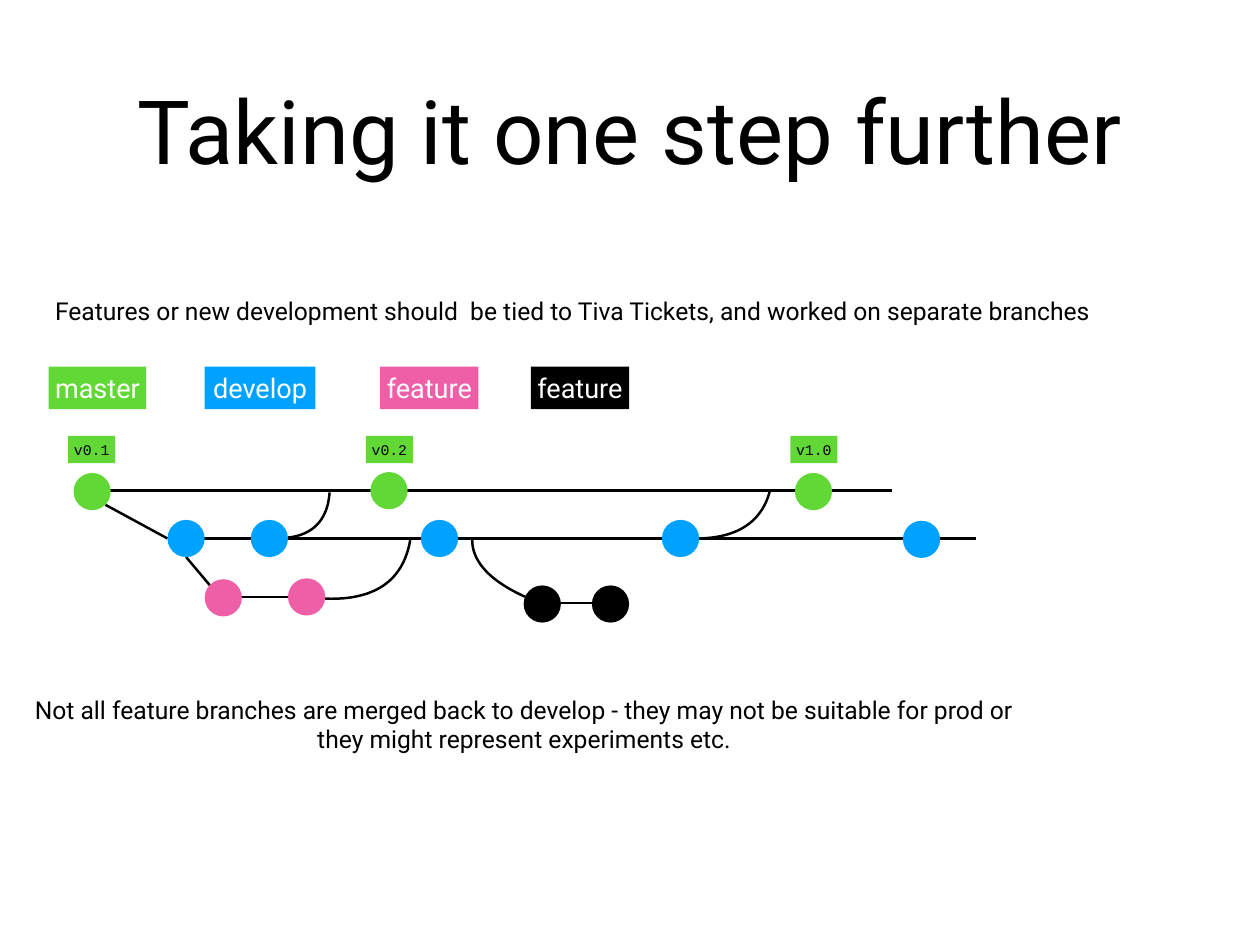
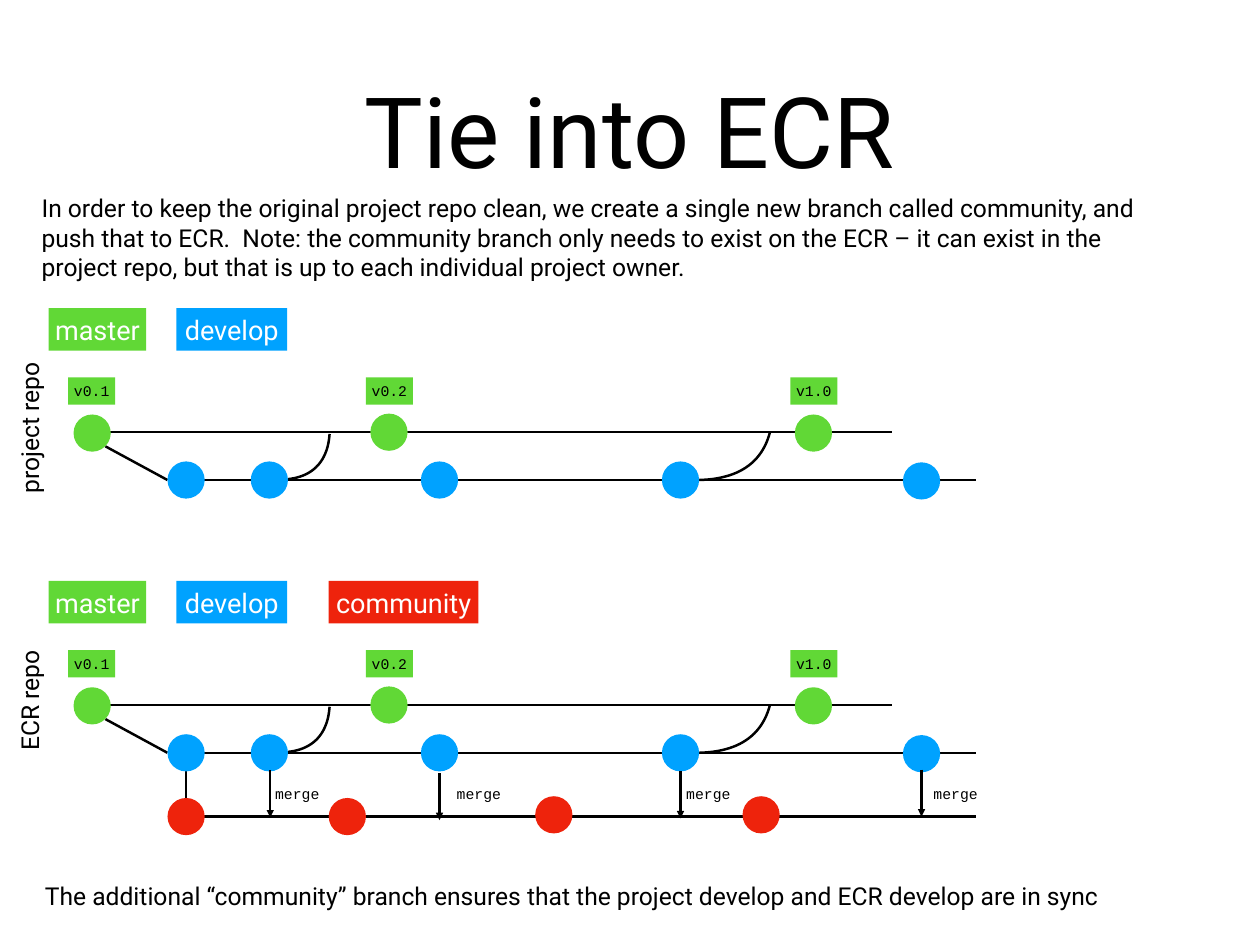
"""Build two slides that show how branches flow and merge."""
import pptx
import pptx.util
import pptx.dml.color
import pptx.enum.shapes
import pptx.enum.text
import pptx.oxml

Inches = pptx.util.Inches
Pt = pptx.util.Pt
RGB = pptx.dml.color.RGBColor
KIND = pptx.enum.shapes.MSO_SHAPE
FIT = pptx.enum.text.MSO_AUTO_SIZE
ALIGN = pptx.enum.text.PP_ALIGN
NS = 'xmlns:a="http://schemas.openxmlformats.org/drawingml/2006/main"'

GREEN = RGB(0x61, 0xD8, 0x36)
BLUE = RGB(0x00, 0xA2, 0xFF)
PINK = RGB(0xEF, 0x5F, 0xA7)
RED = RGB(0xEE, 0x23, 0x0C)
BLACK = RGB(0, 0, 0)
WHITE = RGB(0xFF, 0xFF, 0xFF)
SANS = "Roboto"
MONO = "Courier New"
DOT = 0.42


def write(page, text, x, y, w, h, size=20, font=SANS, color=BLACK, fill=None, wrap=False, fit=True, align=ALIGN.CENTER):
    """Add a text box, or a filled rectangle with text."""
    place = Inches(x), Inches(y), Inches(w), Inches(h)
    if fill is None:
        box = page.shapes.add_textbox(*place)
    else:
        box = page.shapes.add_shape(KIND.RECTANGLE, *place)
        box.shadow.inherit = False
        box.fill.solid()
        box.fill.fore_color.rgb = fill
        box.line.fill.background()
    frame = box.text_frame
    frame.margin_left = frame.margin_right = Inches(0.06)
    frame.margin_top = frame.margin_bottom = Inches(0.06)
    frame.vertical_anchor = pptx.enum.text.MSO_ANCHOR.MIDDLE
    frame.word_wrap = wrap
    frame.auto_size = FIT.SHAPE_TO_FIT_TEXT if fit else FIT.NONE
    frame.text = text
    for para in frame.paragraphs:
        para.alignment = align
        para.font.size = Pt(size)
        para.font.name = font
        para.font.color.rgb = color
    return box


def link(page, x1, y1, x2, y2, arrow=False):
    """Add a straight line, with an arrowhead at its end if asked."""
    line = page.shapes.add_connector(
        pptx.enum.shapes.MSO_CONNECTOR.STRAIGHT, Inches(x1), Inches(y1), Inches(x2), Inches(y2))
    line.line.color.rgb = BLACK
    line.line.width = Pt(2)
    if arrow:
        line.line._get_or_add_ln().append(pptx.oxml.parse_xml(f'<a:tailEnd {NS} type="triangle" w="med" len="med"/>'))
    line._element.spPr.append(pptx.oxml.parse_xml(f"<a:effectLst {NS}/>"))


deck = pptx.Presentation()
deck.slide_width = Inches(14.22)
deck.slide_height = Inches(10.67)

pages = []
for title, size in (("Taking it one step further", 72), ("Tie into ECR", 80)):
    page = deck.slides.add_slide(deck.slide_layouts[6])
    write(page, title, 1.04, 0.28, 12.14, 2.36, size, wrap=True, fit=False)
    pages.append(page)
step, tie = pages

write(step, "Features or new development should  be tied to Tiva Tickets, and worked on separate branches",
      0.48, 3.28, 11.97, 0.45)
write(step, "Not all feature branches are merged back to develop - they may not be suitable for prod or\n"
      "they might represent experiments etc.", 0.24, 7.79, 11.35, 0.77)
write(tie, "In order to keep the original project repo clean, we create a single new branch called community, "
      "and push that to ECR.  Note: the community branch only needs to exist on the ECR – it can exist in the "
      "project repo, but that is up to each individual project owner.",
      0.41, 2.12, 12.77, 1.12, wrap=True, align=ALIGN.LEFT)
write(tie, "The additional “community” branch ensures that the project develop and ECR develop are in sync",
      0.33, 9.89, 12.25, 0.44)
for text, x, y, w in (("project repo", -0.48, 4.61, 1.62), ("ECR repo", -0.33, 7.69, 1.32)):
    write(tie, text, x, y, w, 0.44).rotation = 270

LINES = [(1.04, 1.4, 10.07, 1.4), (1.99, 1.94, 11.02, 1.94), (1.19, 1.56, 1.89, 1.94)]
CURVES = [
    ((3.25, 1.93), (3.54, 1.9), (3.7, 1.72), (3.72, 1.42)),
    ((7.89, 1.94), (8.33, 1.93), (8.6, 1.75), (8.69, 1.4)),
]
DOTS = [
    (GREEN, [(1.04, 1.41), (4.39, 1.4), (9.18, 1.41)]),
    (BLUE, [(2.1, 1.94), (3.04, 1.94), (4.96, 1.94), (7.68, 1.94), (10.4, 1.95)]),
]
TAGS = [("v0.1", 0.77), ("v0.2", 4.13), ("v1.0", 8.92)]
MASTER = ("master", 0.55, 1.1, GREEN)
DEV = ("develop", 1.99, 1.25, BLUE)

graphs = [
    (step, 4.14,
     [MASTER, ("develop", 2.31, 1.25, BLUE), ("feature", 4.29, 1.11, PINK), ("feature", 5.99, 1.11, BLACK)],
     [(2.5, 2.6, 3.58, 2.6), (5.92, 2.67, 7, 2.67), (2.1, 2.15, 2.37, 2.47)],
     [((3.67, 2.62), (4.23, 2.64), (4.55, 2.42), (4.63, 1.96)),
      ((5.33, 1.96), (5.33, 2.2), (5.53, 2.42), (5.93, 2.6))],
     [(PINK, [(2.52, 2.61), (3.46, 2.6)]), (BLACK, [(6.12, 2.68), (6.89, 2.68)])]),
    (tie, 3.48, [MASTER, DEV], [], [], []),
    (tie, 6.56, [MASTER, DEV, ("community", 3.71, 1.69, RED)],
     [(1.99, 2.66, 11.02, 2.66), (2.1, 2.15, 2.1, 2.45)], [],
     [(RED, [(2.1, 2.66), (3.92, 2.66), (6.25, 2.64), (8.59, 2.64)])]),
]

for page, top, names, lines, curves, dots in graphs:
    for name, x, w, fill in names:
        write(page, name, x, top, w, 0.48, 22, color=WHITE, fill=fill)
    for x1, y1, x2, y2 in LINES + lines:
        link(page, x1, top + y1, x2, top + y2)
    for curve in CURVES + curves:
        points = []
        for i in range(25):
            t = i / 24
            parts = (1 - t) ** 3, 3 * t * (1 - t) ** 2, 3 * t ** 2 * (1 - t), t ** 3
            x = sum(part * knot[0] for part, knot in zip(parts, curve))
            y = sum(part * knot[1] for part, knot in zip(parts, curve))
            points.append((Inches(x), Inches(top + y)))
        pen = page.shapes.build_freeform(*points[0])
        pen.add_line_segments(points[1:], close=False)
        arc = pen.convert_to_shape()
        arc.shadow.inherit = False
        arc.fill.background()
        arc.line.color.rgb = BLACK
        arc.line.width = Pt(2)
    for fill, spots in DOTS + dots:
        for x, y in spots:
            dot = page.shapes.add_shape(
                KIND.OVAL, Inches(x - DOT / 2), Inches(top + y - DOT / 2), Inches(DOT), Inches(DOT))
            dot.shadow.inherit = False
            dot.fill.solid()
            dot.fill.fore_color.rgb = fill
            dot.line.fill.background()
    for tag, x in TAGS:
        write(page, tag, x, top + 0.78, 0.53, 0.31, 12, MONO, fill=GREEN)

for x, y, left in ((3.05, 8.7, 3.04), (4.96, 8.73, 5.09), (7.68, 8.71, 7.68), (10.4, 8.69, 10.47)):
    link(tie, x, y, x, y + 0.53, arrow=True)
    write(tie, "merge", left, 8.8, 0.63, 0.31, 12, MONO)

deck.save("out.pptx")
